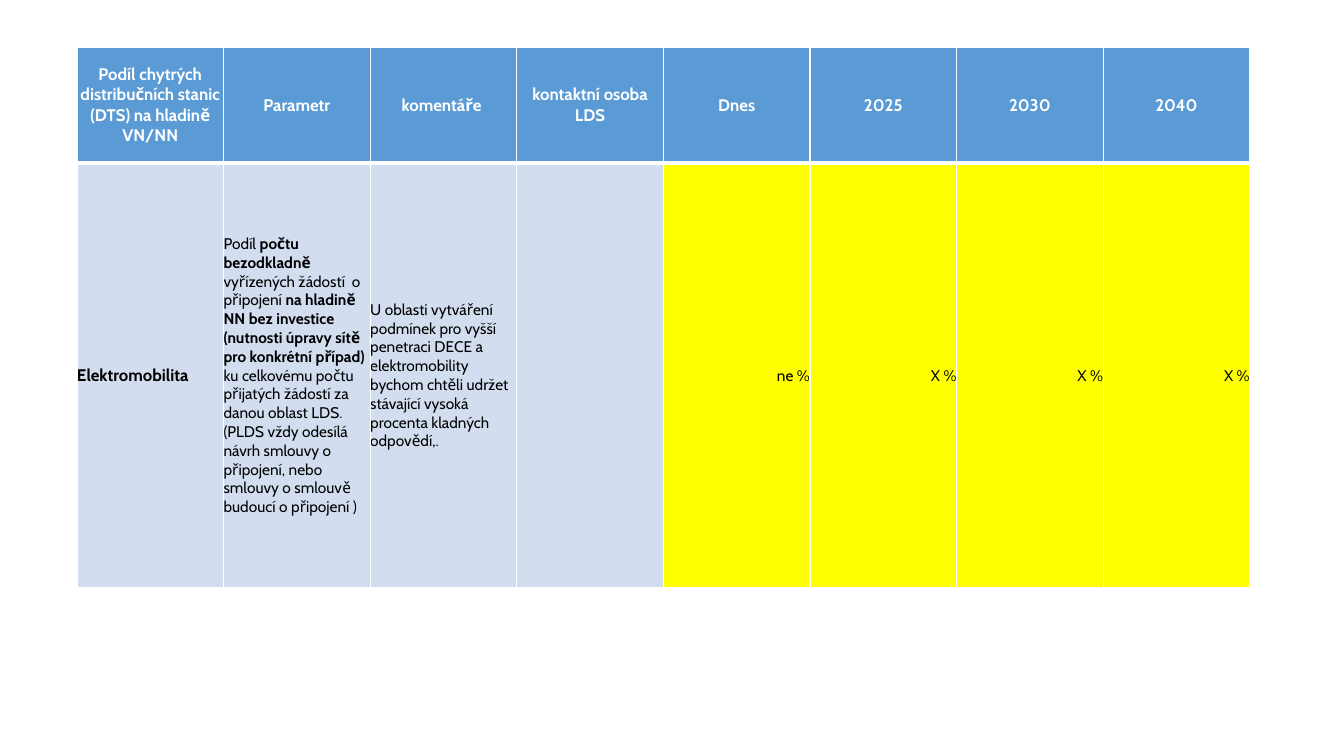
from lxml.etree import SubElement
from pptx import Presentation
from pptx.dml.color import RGBColor
from pptx.enum.text import MSO_ANCHOR as Anchor, PP_ALIGN as Align
from pptx.oxml.ns import qn
from pptx.util import Pt

PX = 914400 / 100.8
WHITE = RGBColor(0xFF, 0xFF, 0xFF)
BLACK = RGBColor(0x00, 0x00, 0x00)
BLUE = RGBColor(0x5B, 0x9B, 0xD5)
PALE_BLUE = RGBColor(0xD2, 0xDE, 0xEF)
YELLOW = RGBColor(0xFF, 0xFF, 0x00)
LEFT, TOP, WIDTH = 77, 47, 1173
ROW_HEIGHTS = [116, 425]


def px(length):
    return round(length * PX)


def fill_cell(cell, runs, size, color, fill, align, borders):
    margins = dict.fromkeys(["margin_left", "margin_right", "margin_top", "margin_bottom"], 0)
    for name, value in {**margins, "vertical_anchor": Anchor.MIDDLE}.items():
        setattr(cell, name, value)
    cell_properties = cell._tc.get_or_add_tcPr()
    for side, points in borders.items():
        line = SubElement(cell_properties, qn(f"a:ln{side}"), w=str(Pt(points)))
        paint = SubElement(line, qn("a:solidFill"))
        SubElement(paint, qn("a:srgbClr"), val=str(WHITE))
    cell.fill.solid()
    cell.fill.fore_color.rgb = fill
    paragraph = cell.text_frame.paragraphs[0]
    paragraph.alignment = align
    for text, bold in runs:
        if text == "\n":
            paragraph.add_line_break()
            SubElement(paragraph._p[-1], qn("a:rPr"), sz=str(size * 100))
            continue
        run = paragraph.add_run()
        run.text = text
        for name, value in {"name": "Cabin", "size": Pt(size), "bold": bold}.items():
            setattr(run.font, name, value)
        run.font.color.rgb = color


headings = [
    "Podíl chytrých distribučních stanic (DTS) na hladině VN/NN",
    "Parametr",
    "komentáře ",
    "kontaktní osoba LDS",
    "Dnes",
    "2025",
    "2030",
    "2040",
]
parameter = [
    ("Podíl ", False),
    ("počtu bezodkladně", True),
    (" vyřízených žádostí  o připojení ", False),
    ("na hladině NN bez investice (nutnosti úpravy sítě pro konkrétní případ)", True),
    (" ku celkovému počtu přijatých žádostí za danou oblast LDS.", False),
    ("\n", False),
    ("(PLDS vždy odesílá návrh smlouvy o připojení, nebo smlouvy o smlouvě "
     "budoucí o připojení )", False),
]
comment = (
    "U oblasti vytváření podmínek pro vyšší penetraci DECE a elektromobility "
    "bychom chtěli udržet stávající vysoká procenta kladných odpovědí,."
)
descriptions = [[("Elektromobilita", True)], parameter, [(comment, False)], []]
shares = ["ne %", "X %", "X %", "X %"]

presentation = Presentation()
presentation.slide_width = px(1344)
presentation.slide_height = px(756)
slide = presentation.slides.add_slide(presentation.slide_layouts[6])

indicators = slide.shapes.add_table(
    2, len(headings), px(LEFT), px(TOP), px(WIDTH), px(sum(ROW_HEIGHTS))
).table
for column in indicators.columns:
    column.width = px(WIDTH / len(headings))
for row, height in zip(indicators.rows, ROW_HEIGHTS):
    row.height = px(height)

heading_borders = {"L": 1, "R": 1, "T": 1, "B": 3}
value_borders = {"L": 1, "R": 1, "T": 3, "B": 1}
for index, heading in enumerate(headings):
    fill_cell(indicators.cell(0, index), [(heading, True)], 12, WHITE, BLUE,
              Align.CENTER, heading_borders)
for index, runs in enumerate(descriptions):
    fill_cell(indicators.cell(1, index), runs, 11 if index else 12, BLACK, PALE_BLUE,
              Align.LEFT, value_borders)
for index, share in enumerate(shares, len(descriptions)):
    fill_cell(indicators.cell(1, index), [(share, False)], 11, BLACK, YELLOW,
              Align.RIGHT, value_borders)

presentation.save("out.pptx")
